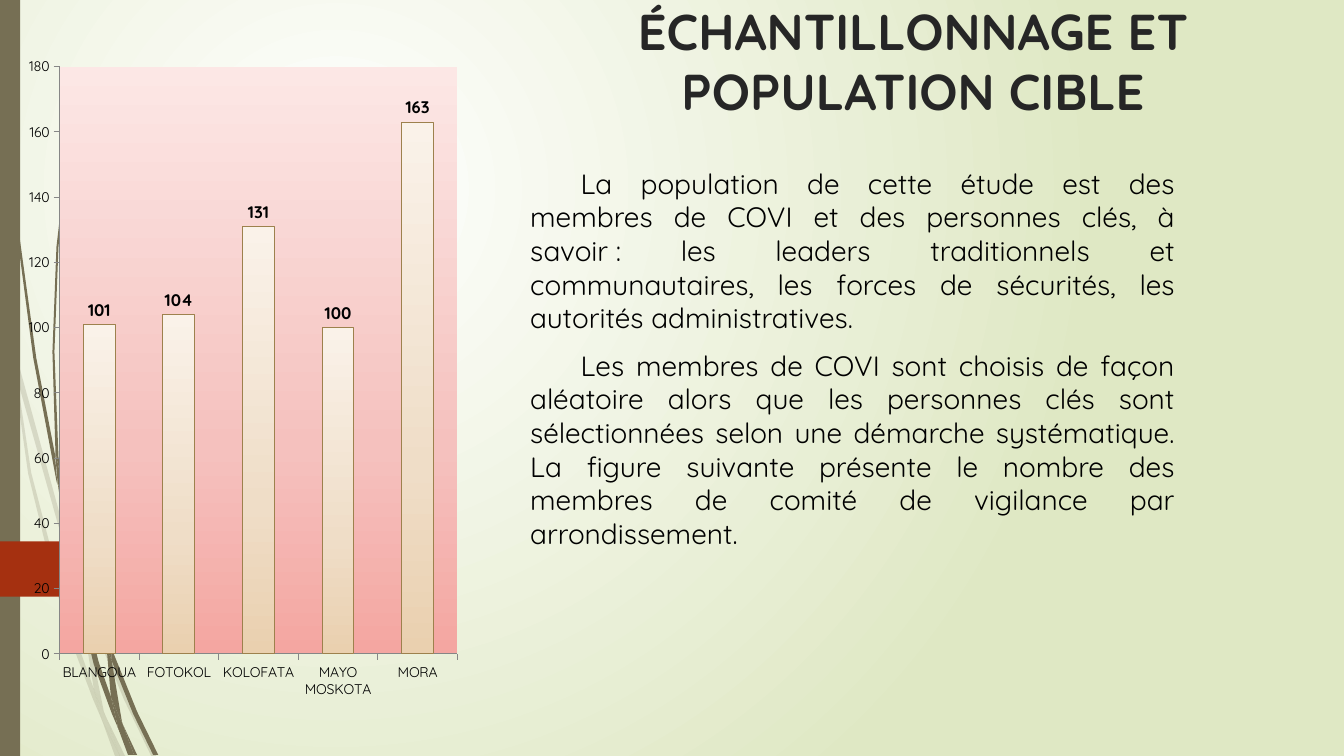
from pptx import Presentation
from pptx.chart.data import CategoryChartData
from pptx.dml.color import RGBColor
from pptx.enum.chart import XL_CHART_TYPE as ChartType, XL_LABEL_POSITION as LabelPos, XL_TICK_MARK as Tick
from pptx.enum.shapes import MSO_SHAPE as Shape
from pptx.enum.text import MSO_ANCHOR as Anchor, MSO_AUTO_SIZE as AutoSize, PP_ALIGN as Align
from pptx.oxml import parse_xml
from pptx.oxml.ns import nsdecls, qn
from pptx.util import Inches, Pt
from lxml.etree import SubElement

FONT = "Quicksand"
BLACK = RGBColor(0x00, 0x00, 0x00)
TITLE_GREY = RGBColor(0x26, 0x26, 0x26)
OLIVE = RGBColor(0x76, 0x6F, 0x54)
RUST = RGBColor(0xA5, 0x30, 0x10)
BAR_EDGE = RGBColor(0x9D, 0x81, 0x4D)
AXIS_GREY = RGBColor(0x86, 0x86, 0x86)
BACKGROUND_STOPS = [(0, "FFFFFF"), (100, "DFE8C4")]
PLOT_STOPS = [(0, "F4A6A1"), (35, "F5C1BE"), (100, "FCE7E5")]
BAR_STOPS = [(0, "EAD0AF"), (35, "EFDDC7"), (100, "FAF2E9")]
UPWARD = '<a:lin ang="16200000" scaled="0"/>'
FROM_UPPER_LEFT = '<a:path path="circle"><a:fillToRect l="50000" t="50000" r="100000" b="100000"/></a:path>'

TITLE = "ÉCHANTILLONNAGE ET POPULATION CIBLE"
PARAGRAPHS = [
    "La population de cette étude est des membres de COVI et des personnes clés, à "
    "savoir\u00a0: les leaders traditionnels et communautaires, les forces de sécurités, "
    "les autorités administratives.",
    "Les membres de COVI sont choisis de façon aléatoire alors que les personnes clés "
    "sont sélectionnées selon une démarche systématique. La figure suivante présente le "
    "nombre des membres de comité de vigilance par arrondissement.",
]
MEMBERS = {"BLANGOUA": 101, "FOTOKOL": 104, "KOLOFATA": 131, "MAYO MOSKOTA": 100, "MORA": 163}
PLOT_LAYOUT = {"x": 0.077, "y": 0.05, "w": 0.893, "h": 0.853}

# Outlines of the grass blades, in inches
PALE_BLADES = [
    [(0.11, 3.5), (0.09, 3.22), (0, 2.82), (0, 2.99), (0.1, 3.44)],
    [(0.58, 5.22), (0.84, 5.99), (0.85, 5.86), (0.62, 5.2), (0.14, 3.45), (0.17, 3.76)],
    [(0.92, 6.07), (0.88, 5.96), (0.88, 6.1), (1.23, 6.94), (1.5, 7.5), (1.55, 7.5), (1.27, 6.92)],
    [(1.19, 7.5), (1.24, 7.5), (1.05, 7.11)],
    [(0.93, 6.83), (0.7, 6.19), (0.31, 4.69), (0.17, 3.76), (0.11, 3.5), (0.28, 4.7),
     (0.65, 6.21), (0.92, 6.93), (1.01, 7.14), (0.99, 7.07)],
    [(0.84, 5.99), (0.87, 6.46), (0.93, 6.83), (0.96, 6.92), (1.05, 7.11), (1.03, 7.06),
     (0.91, 6.46), (0.88, 6.1), (0.88, 6.08)],
    [(0.88, 5.84), (1.1, 4.62), (1.6, 3.49), (2.29, 2.45), (2.68, 1.98), (2.9, 1.75),
     (3.12, 1.54), (3.12, 1.53), (2.89, 1.75), (2.68, 1.97), (2.28, 2.44), (1.58, 3.48),
     (1.07, 4.61), (0.85, 5.84), (0.85, 5.86), (0.88, 5.96)],
    [(1.01, 7.14), (1.14, 7.5), (1.19, 7.5)],
    [(0.88, 6.08), (0.88, 6.1), (0.88, 5.96), (0.85, 5.86), (0.84, 5.99)],
    [(0.96, 6.92), (0.93, 6.83), (0.99, 7.07), (1.01, 7.14), (1.19, 7.5), (1.05, 7.11)],
]
DARK_BLADES = [
    [(0.07, 1.1), (0.17, 2.33), (0.33, 3.55), (0.56, 4.77), (0.57, 4.81), (0.55, 4.57),
     (0.55, 4.53), (0.36, 3.55), (0.19, 2.32), (0.08, 1.09), (0.05, 0.48), (0.04, 0),
     (0.03, 0), (0.04, 0.48)],
    [(0.88, 5.92), (1.06, 6.45), (1.06, 6.31), (0.93, 5.9), (0.6, 4.72), (0.64, 5.05)],
    [(1.13, 6.49), (1.1, 6.41), (1.11, 6.56), (1.32, 7.08), (1.52, 7.49), (1.57, 7.49), (1.36, 7.06)],
    [(1.1, 6.91), (0.98, 6.57), (0.72, 5.56), (0.64, 5.05), (0.57, 4.77), (0.68, 5.57),
     (0.93, 6.59), (1.11, 7.08), (1.17, 7.22), (1.16, 7.17)],
    [(0.6, 4.72), (0.58, 4.53), (0.54, 3.49), (0.58, 2.45), (0.63, 1.93), (0.7, 1.41),
     (0.62, 1.93), (0.56, 2.45), (0.52, 3.49), (0.55, 4.49)],
    [(1.33, 7.49), (1.36, 7.49), (1.22, 7.19)],
    [(0.57, 4.77), (0.64, 5.05), (0.6, 4.72), (0.55, 4.49), (0.55, 4.53)],
    [(1.11, 6.33), (1.25, 5.52), (1.58, 4.76), (2.05, 4.06), (2.31, 3.74), (2.45, 3.59),
     (2.61, 3.44), (2.6, 3.44), (2.45, 3.58), (2.31, 3.73), (2.04, 4.05), (1.56, 4.74),
     (1.22, 5.51), (1.06, 6.31), (1.1, 6.41)],
    [(1.17, 7.22), (1.27, 7.49), (1.31, 7.49)],
    [(1.06, 6.45), (1.1, 6.91), (1.16, 7.06), (1.22, 7.19), (1.21, 7.16), (1.11, 6.56), (1.09, 6.51)],
    [(1.06, 6.45), (1.09, 6.51), (1.11, 6.56), (1.1, 6.41), (1.06, 6.31)],
    [(1.16, 7.06), (1.1, 6.91), (1.16, 7.17), (1.17, 7.22), (1.3, 7.49), (1.33, 7.49), (1.22, 7.19)],
]


def gradient(stops, direction):
    marks = "".join(f'<a:gs pos="{pos * 1000}"><a:srgbClr val="{color}"/></a:gs>' for pos, color in stops)
    return parse_xml(f'<a:gradFill {nsdecls("a")} rotWithShape="1"><a:gsLst>{marks}</a:gsLst>{direction}</a:gradFill>')


def paint(shape, color, opacity=100):
    shape.shadow.inherit = False
    shape.fill.solid()
    shape.fill.fore_color.rgb = color
    shape.line.fill.background()
    if opacity < 100:
        srgb = shape._element.spPr.find(qn("a:solidFill"))[0]
        SubElement(srgb, qn("a:alpha"), val=str(opacity * 1000))


def style(font, size, color=BLACK, bold=False):
    font.name, font.size, font.bold = FONT, Pt(size), bold
    font.color.rgb = color


def add_decoration(shapes):
    for blades, opacity in ((PALE_BLADES, 20), (DARK_BLADES, 100)):
        for blade in blades:
            points = [(Inches(x), Inches(y)) for x, y in blade]
            outline = shapes.build_freeform(*points[0])
            outline.add_line_segments(points[1:], close=True)
            paint(outline.convert_to_shape(), OLIVE, opacity)
    side_band = shapes.add_shape(Shape.RECTANGLE, 0, 0, Inches(0.2), Inches(7.5))
    paint(side_band, OLIVE)
    tab = shapes.add_shape(Shape.PENTAGON, 0, Inches(5.37), Inches(1.74), Inches(0.55))
    tab.adjustments[0] = 0.45
    paint(tab, RUST)


def add_title(title):
    title.left, title.top, title.width, title.height = map(Inches, (5.16, 0.13, 7.79, 1.43))
    frame = title.text_frame
    frame.auto_size, frame.vertical_anchor = AutoSize.NONE, Anchor.BOTTOM
    frame.margin_bottom = Inches(0.36)
    frame.paragraphs[0].alignment = Align.CENTER
    run = frame.paragraphs[0].add_run()
    run.text = TITLE
    style(run.font, 36, TITLE_GREY, bold=True)


def add_body(shapes):
    frame = shapes.add_textbox(*map(Inches, (5.16, 1.56, 6.59, 5.6))).text_frame
    frame.word_wrap = True
    frame.margin_top = Inches(0.09)
    for i, text in enumerate(PARAGRAPHS):
        paragraph = frame.add_paragraph() if i else frame.paragraphs[0]
        paragraph.alignment = Align.JUSTIFY
        paragraph.space_before = Pt(10 if i else 0)
        paragraph._p.get_or_add_pPr().set("indent", str(Inches(0.5)))
        run = paragraph.add_run()
        run.text = text
        style(run.font, 20)


def add_members_chart(shapes):
    data = CategoryChartData(number_format="###0")
    data.categories = list(MEMBERS)
    data.add_series("Series 1", list(MEMBERS.values()))
    box = map(Inches, (0.25, 0.32, 4.42, 6.83))
    chart = shapes.add_chart(ChartType.COLUMN_CLUSTERED, *box, data).chart
    chart.has_legend = chart.has_title = False
    style(chart.font, 10)

    for axis in (chart.category_axis, chart.value_axis):
        axis.has_major_gridlines = False
        axis.major_tick_mark = Tick.OUTSIDE
        axis.minor_tick_mark = Tick.NONE
        axis.format.line.color.rgb = AXIS_GREY
        style(axis.tick_labels.font, 10)
    values = chart.value_axis
    values.minimum_scale, values.maximum_scale, values.major_unit = 0, 180, 20
    values.tick_labels.number_format = "###0"
    values.tick_labels.number_format_is_linked = False

    plot = chart.plots[0]
    plot.gap_width, plot.vary_by_categories = 150, False
    plot.has_data_labels = True
    labels = plot.data_labels
    labels.show_value, labels.position = True, LabelPos.OUTSIDE_END
    labels.number_format, labels.number_format_is_linked = "###0", False
    style(labels.font, 12, bold=True)

    bars = plot.series[0]
    bars.format.line.color.rgb = BAR_EDGE
    bars.format.line.width = Pt(0.75)
    bars._element.get_or_add_spPr().insert(0, gradient(BAR_STOPS, UPWARD))

    area = chart._chartSpace.chart.plotArea
    for old in area.findall(qn("c:layout")):
        area.remove(old)
    modes = '<c:layoutTarget val="inner"/><c:xMode val="edge"/><c:yMode val="edge"/>'
    sizes = "".join(f'<c:{key} val="{value}"/>' for key, value in PLOT_LAYOUT.items())
    area.insert(0, parse_xml(
        f'<c:layout {nsdecls("c")}><c:manualLayout>{modes}{sizes}</c:manualLayout></c:layout>'))
    SubElement(area, qn("c:spPr")).append(gradient(PLOT_STOPS, UPWARD))


def main():
    deck = Presentation()
    deck.slide_width, deck.slide_height = Inches(13.33), Inches(7.5)
    slide = deck.slides.add_slide(deck.slide_layouts[5])
    slide.background.fill.solid()
    backdrop = slide._element.cSld.bg.bgPr
    backdrop.replace(backdrop[0], gradient(BACKGROUND_STOPS, FROM_UPPER_LEFT))
    add_decoration(slide.shapes)
    add_title(slide.shapes.title)
    add_body(slide.shapes)
    add_members_chart(slide.shapes)
    deck.save("out.pptx")


if __name__ == "__main__":
    main()
